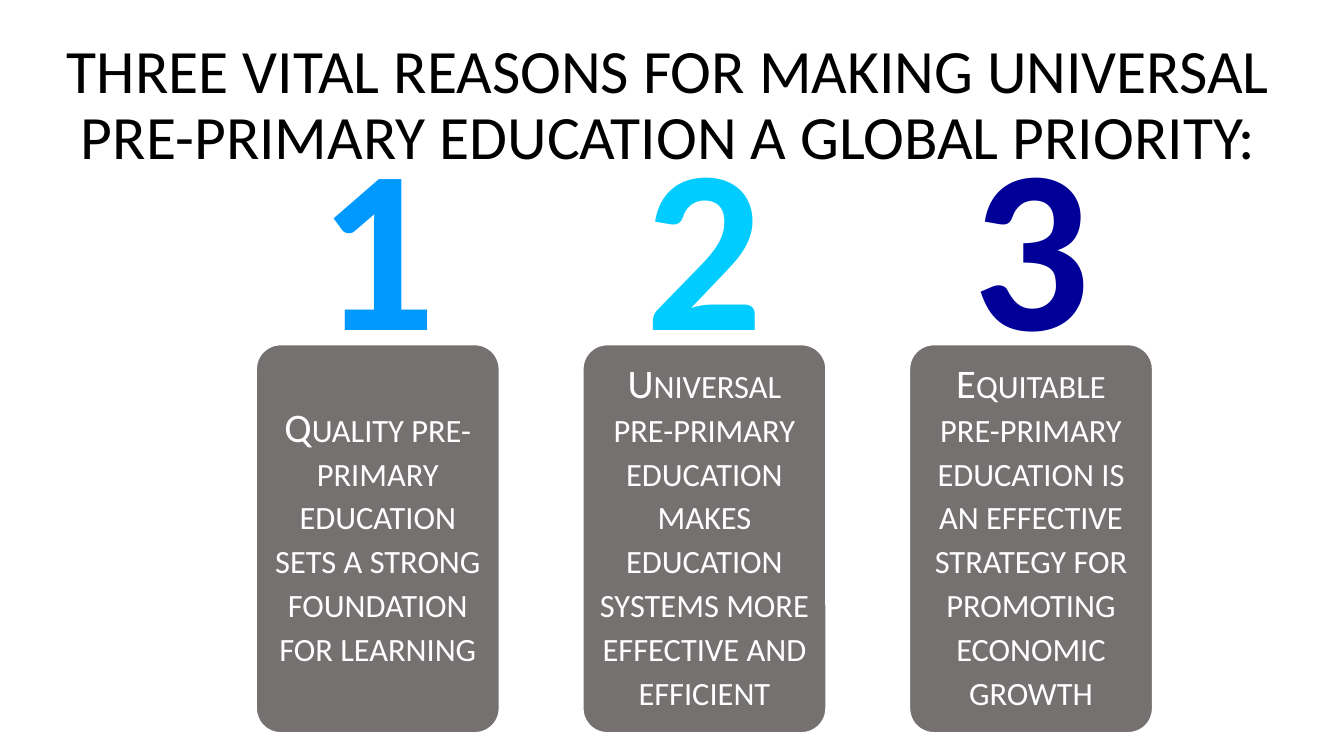
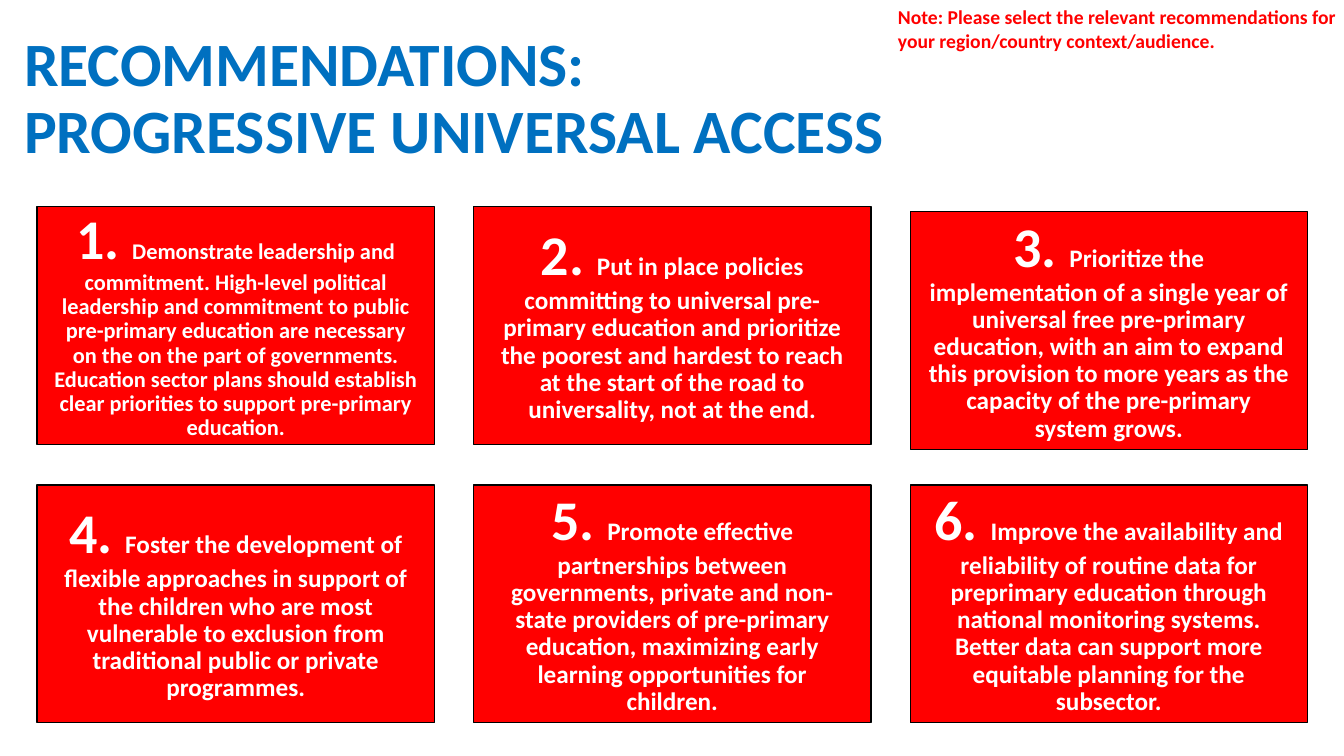
from dataclasses import dataclass

from pptx import Presentation
from pptx.dml.color import RGBColor
from pptx.enum import shapes, text
from pptx.util import Pt


@dataclass(frozen=True)
class Theme:
    font: str = "Calibri"
    black: str = "000000"
    white: str = "FFFFFF"
    blue: str = "0070C0"
    red: str = "FF0000"
    gray: str = "767171"
    digits: tuple = ("0099FF", "00CCFF", "000099")
    title: int = 44
    digit: int = 166
    card: int = 29
    mark: int = 40
    body: int = 18
    small: int = 16
    note: int = 14


T = Theme()
CENTER, LEFT = text.PP_ALIGN.CENTER, text.PP_ALIGN.LEFT
MIDDLE, TOP = text.MSO_ANCHOR.MIDDLE, text.MSO_ANCHOR.TOP

REASONS = [
    "Quality pre-primary education sets a strong foundation for learning",
    "Universal pre-primary education makes education systems more "
    "effective and efficient",
    "Equitable pre-primary education is an effective strategy for "
    "promoting economic growth",
]

# Advice text, type size and drop below the row line
ADVICE = [
    ("Demonstrate leadership and commitment. High-level political leadership "
     "and commitment to public pre-primary education are necessary on the on "
     "the part of governments. Education sector plans should establish clear "
     "priorities to support pre-primary education.", T.small, 0),
    ("Put in place policies committing to universal pre-primary education and "
     "prioritize the poorest and hardest to reach at the start of the road to "
     "universality, not at the end.", T.body, 0),
    ("Prioritize the implementation of a single year of universal free "
     "pre-primary education, with an aim to expand this provision to more "
     "years as the capacity of the pre-primary system grows.", T.body, 3.6),
    ("Foster the development of flexible approaches in support of the "
     "children who are most vulnerable to exclusion from traditional public "
     "or private programmes.", T.body, 0),
    ("Promote effective partnerships between governments, private and "
     "non-state providers of pre-primary education, maximizing early learning "
     "opportunities for children.", T.body, 0),
    ("Improve the availability and reliability of routine data for preprimary "
     "education through national monitoring systems. Better data can support "
     "more equitable planning for the subsector.", T.body, 0),
]


def assign(obj, vals):
    for name, val in vals.items():
        setattr(obj, name, val)


def write(shape, runs, color, bold=False, align=CENTER, anchor=MIDDLE,
          pad=(7.2, 3.6, 7.2, 3.6), space=0.9, caps=False):
    """Fill a shape with one paragraph of (words, size) runs."""
    frame = shape.text_frame
    sides = ("margin_left", "margin_top", "margin_right", "margin_bottom")
    assign(frame, {side: Pt(p) for side, p in zip(sides, pad)})
    assign(frame, {"word_wrap": True, "vertical_anchor": anchor,
                   "auto_size": text.MSO_AUTO_SIZE.NONE})
    para = frame.paragraphs[0]
    assign(para, {"alignment": align, "line_spacing": space})
    for words, size in runs:
        run = para.add_run()
        run.text = words
        assign(run.font, {"name": T.font, "size": Pt(size), "bold": bold})
        run.font.color.rgb = RGBColor.from_string(color)
        if caps:
            run.font._element.set("cap", "small")


def block(slide, kind, box, fill, line):
    shape = slide.shapes.add_shape(kind, *map(Pt, box))
    shape.shadow.inherit = False
    shape.fill.solid()
    shape.fill.fore_color.rgb = RGBColor.from_string(fill)
    shape.line.color.rgb = RGBColor.from_string(line)
    shape.line.width = Pt(1)
    return shape


def label(slide, box, *args, **look):
    write(slide.shapes.add_textbox(*map(Pt, box)), *args, **look)


def start(deck, words, box, color, **look):
    """Add a title-only slide with its title in place."""
    slide = deck.slides.add_slide(deck.slide_layouts[5])
    title = slide.shapes.title
    assign(title, dict(zip(("left", "top", "width", "height"), map(Pt, box))))
    first, *rest = words
    write(title, [(first, T.title)], color, **look)
    for part in rest:
        title.text_frame.paragraphs[0].add_line_break()
        write(title, [(part, T.title)], color, **look)
    return slide


def reason(slide, box, digit, color, words):
    """Large digit over a rounded card."""
    x, y, w, h = box
    top, side = 128.2, 21.8
    label(slide, (x, y, w, top), [(digit, T.digit)], color, bold=True,
          pad=(49.7,) * 4)
    card = block(slide, shapes.MSO_SHAPE.ROUNDED_RECTANGLE,
                 (x + side, y + top, w - 2 * side, h - top), T.gray, T.white)
    card.adjustments[0] = 0.1
    write(card, [(words, T.card)], T.white, pad=(5.8, 4.3, 5.8, 4.3),
          caps=True)


def advice(slide, box, num, words, size):
    """Red box with a large number leading the text."""
    card = block(slide, shapes.MSO_SHAPE.RECTANGLE, box, T.red, T.black)
    write(card, [(f"{num}. ", T.mark), (words, size)], T.white, bold=True,
          pad=(12.2,) * 4)


def reasons(deck):
    slide = start(deck, ["THREE VITAL REASONS FOR MAKING UNIVERSAL "
                         "PRE-PRIMARY EDUCATION A GLOBAL PRIORITY:"],
                  (27.4, 23.8, 900.7, 104.4), T.black)
    for i, (color, words) in enumerate(zip(T.digits, REASONS)):
        reason(slide, (161.3 + 233.3 * i, 118, 217.2, 405.4),
               str(i + 1), color, words)


def access(deck):
    slide = start(deck, ["RECOMMENDATIONS:", "PROGRESSIVE UNIVERSAL ACCESS"],
                  (10, 19.4, 906.5, 104.4), T.blue, bold=True, align=LEFT)
    for i, (words, size, drop) in enumerate(ADVICE):
        row, col = divmod(i, 3)
        box = (26.6 + 311.8 * col, 147.6 + 198.7 * row + drop, 283.7, 170)
        advice(slide, box, i + 1, words, size)
    # Note to the presenter
    label(slide, (634.3, 0, 325.7, 41), [
        ("Note: Please select the relevant recommendations for your "
         "region/country context/audience.", T.note)], T.red, bold=True,
        align=LEFT, anchor=TOP, pad=(7.2, 3.6, 0, 3.6), space=1.0)


def main():
    deck = Presentation()
    assign(deck, {"slide_width": Pt(960), "slide_height": Pt(540)})
    reasons(deck)
    access(deck)
    deck.save("out.pptx")


if __name__ == "__main__":
    main()
